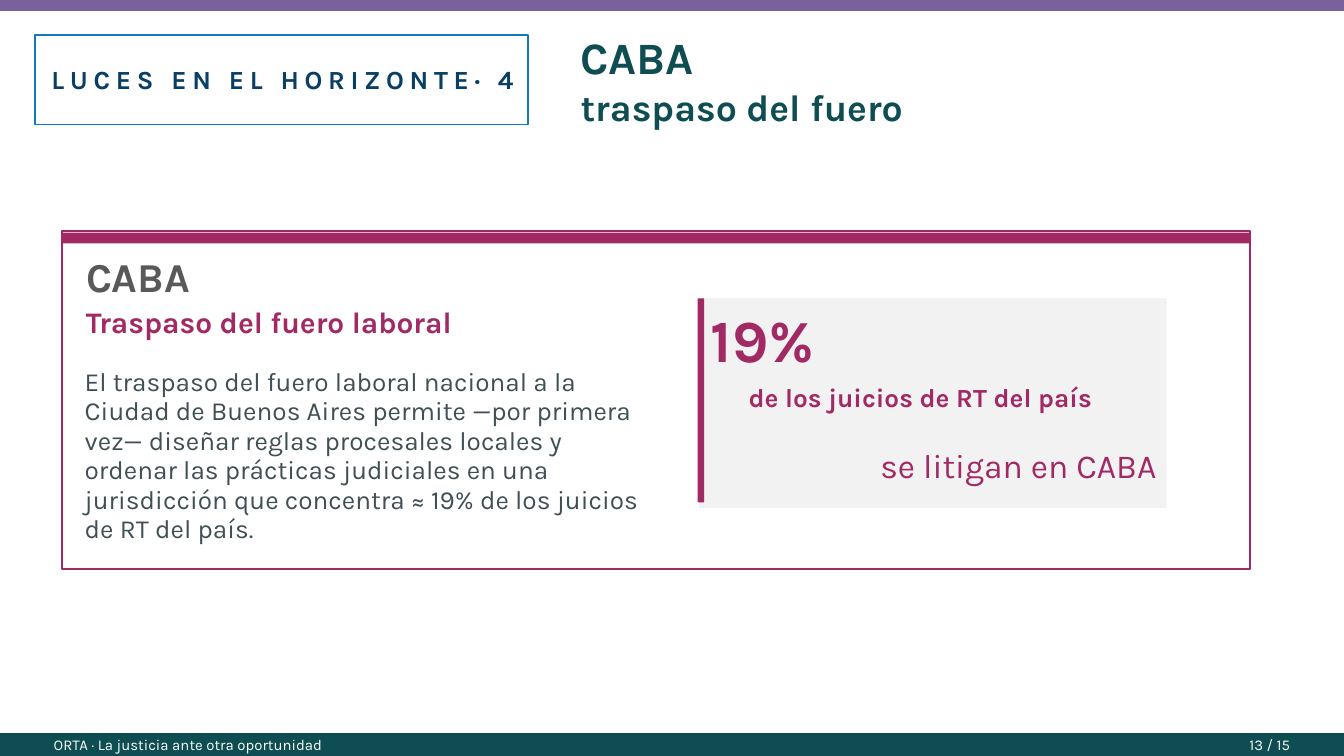
from dataclasses import dataclass
from typing import Optional

from pptx import Presentation
from pptx.dml.color import RGBColor
from pptx.enum.shapes import MSO_SHAPE
from pptx.enum.text import MSO_ANCHOR as Anchor, MSO_AUTO_SIZE as Fit, PP_ALIGN as Align
from pptx.util import Pt

FACE = "Karla"
WHITE = RGBColor(0xFF, 0xFF, 0xFF)
PLUM = RGBColor(0xA1, 0x2A, 0x65)
TEAL = RGBColor(0x0E, 0x4D, 0x52)
BLUE = RGBColor(0x12, 0x79, 0xBF)
NAVY = RGBColor(0x09, 0x3F, 0x64)
VIOLET = RGBColor(0x7B, 0x61, 0x9C)
GREY = RGBColor(0x59, 0x59, 0x59)
SLATE = RGBColor(0x3F, 0x4F, 0x54)
PALE = RGBColor(0xF2, 0xF2, 0xF2)

Box = tuple[float, float, float, float]


@dataclass
class Panel:
    box: Box
    fill: Optional[RGBColor] = None
    line: Optional[RGBColor] = None


@dataclass
class Label:
    box: Box
    text: str
    size: float
    color: RGBColor
    bold: bool = False
    align: Align = Align.LEFT
    anchor: Anchor = Anchor.MIDDLE
    pitch: Optional[float] = None
    track: float = 0


PANELS = [
    Panel((33.8, 124.6, 635.8, 5.8), fill=PLUM),
    Panel((33.1, 123.8, 636.5, 181), line=PLUM),
    Panel((0, 393, 720, 12), fill=TEAL, line=TEAL),
    Panel((18.7, 18.7, 264.2, 48), line=BLUE),
    Panel((0, 0, 720, 5.8), fill=VIOLET),
]
LABELS = [
    Label((28.8, 392.6, 432, 13), "ORTA · La justicia ante otra oportunidad", 8, WHITE),
    Label((619.2, 392.6, 72, 13), "13 / 15", 8, WHITE, align=Align.RIGHT),
    Label((0, 29.5, 303, 26), "LUCES EN EL HORIZONTE· 4", 14, NAVY, True,
          Align.CENTER, track=3),
    Label((46.1, 134.6, 294.5, 34), "CABA", 22, GREY, True, anchor=Anchor.TOP),
    Label((46.1, 159.8, 244.8, 25.2), "Traspaso del fuero laboral", 16, PLUM, True),
    Label((45.4, 196.6, 302.4, 108),
          "El traspaso del fuero laboral nacional a la Ciudad de Buenos Aires permite "
          "—por primera vez— diseñar reglas procesales locales y ordenar las prácticas "
          "judiciales en una jurisdicción que concentra ≈ 19% de los juicios de RT del país.",
          14, SLATE, anchor=Anchor.TOP, pitch=15.8),
]
STAT_PANELS = [
    Panel((374.4, 159.8, 250.6, 112.3), fill=PALE),
    Panel((373.7, 159.8, 3.6, 109.4), fill=PLUM),
]
STAT_LABELS = [
    Label((401, 185, 215.3, 57.6), "de los juicios de RT del país", 14, PLUM, True,
          pitch=14.8),
    Label((380.9, 152.6, 149, 57.6), "19%", 32, PLUM, True),
    Label((471.6, 223.9, 241.2, 57.6), "se litigan en CABA", 18, PLUM, pitch=14.8),
]


def place(box: Box) -> list[Pt]:
    return [Pt(n) for n in box]


def draw_panel(shapes, item: Panel) -> None:
    rect = shapes.add_shape(MSO_SHAPE.RECTANGLE, *place(item.box))
    rect.shadow.inherit = False
    if item.fill is not None:
        rect.fill.solid()
        rect.fill.fore_color.rgb = item.fill
    else:
        rect.fill.background()
    if item.line is not None:
        rect.line.color.rgb = item.line
        rect.line.width = Pt(1)
    else:
        rect.line.fill.background()


def set_frame(frame, anchor: Anchor) -> None:
    frame.word_wrap = True
    frame.auto_size = Fit.NONE
    frame.vertical_anchor = anchor
    frame.margin_left = frame.margin_right = 0
    frame.margin_top = frame.margin_bottom = 0


def set_font(para, size: float, color: RGBColor, bold: bool) -> None:
    font = para.font
    font.name, font.size, font.bold = FACE, Pt(size), bold
    font.color.rgb = color


def draw_label(shapes, item: Label) -> None:
    frame = shapes.add_textbox(*place(item.box)).text_frame
    set_frame(frame, item.anchor)
    para = frame.paragraphs[0]
    para.text = item.text
    para.alignment = item.align
    if item.pitch:
        para.line_spacing = Pt(item.pitch)
    set_font(para, item.size, item.color, item.bold)
    if item.track:
        para.runs[0].font._element.set("spc", str(int(item.track * 100)))


def draw_title(title) -> None:
    title.left, title.top, title.width, title.height = place((311, 18.7, 488.2, 47.5))
    frame = title.text_frame
    set_frame(frame, Anchor.MIDDLE)
    frame.text = "CABA\ntraspaso del fuero"
    for para, size in zip(frame.paragraphs, (24, 20)):
        para.alignment = Align.LEFT
        set_font(para, size, TEAL, True)


def draw_all(shapes, panels: list[Panel], labels: list[Label]) -> None:
    for item in panels:
        draw_panel(shapes, item)
    for item in labels:
        draw_label(shapes, item)


def main() -> None:
    deck = Presentation()
    deck.slide_width, deck.slide_height = Pt(720), Pt(405)
    slide = deck.slides.add_slide(deck.slide_layouts[5])
    draw_title(slide.shapes.title)
    draw_all(slide.shapes, PANELS, LABELS)
    stat = slide.shapes.add_group_shape()
    draw_all(stat.shapes, STAT_PANELS, STAT_LABELS)
    deck.save("out.pptx")


if __name__ == "__main__":
    main()
